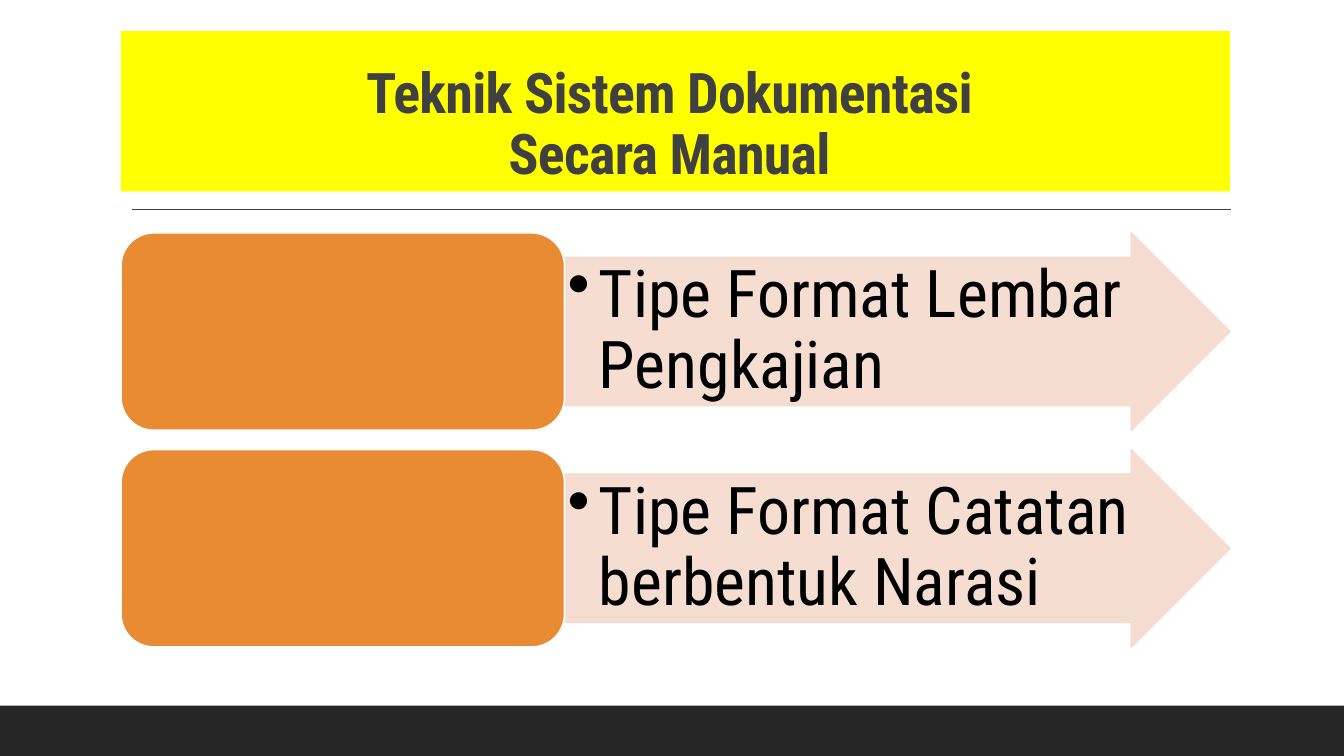
from dataclasses import dataclass

from lxml.etree import SubElement
from pptx import Presentation
from pptx.dml.color import RGBColor
from pptx.enum.shapes import MSO_CONNECTOR as Connector, MSO_SHAPE as Preset
from pptx.enum.text import MSO_ANCHOR as Anchor, PP_ALIGN as Align
from pptx.oxml.ns import qn
from pptx.shapes.autoshape import Shape
from pptx.slide import Slide
from pptx.util import Inches, Pt

COLORS = {
    "footer": "262626",
    "title_fill": "FFFF00",
    "title_text": "404040",
    "arrow": "F6DACE",
    "label": "E88B33",
    "label_line": "FFFFFF",
    "body_text": "000000",
}
FONT = "Roboto Condensed"

LEFT, ARROW_LEFT, RIGHT = 1.2, 5.6, 12.2
FIRST_TOP, ROW_STEP, ROW_HEIGHT = 2.31, 2.15, 1.96
SHAFT_SHARE = 0.75
SHAFT_HEIGHT = ROW_HEIGHT * SHAFT_SHARE
TEXT_WIDTH, TEXT_INSET, BULLET_INDENT = 5.87, 0.03, 0.31


@dataclass
class Box:
    left: float
    top: float
    width: float
    height: float

    def lengths(self) -> list[Inches]:
        return [Inches(n) for n in (self.left, self.top, self.width, self.height)]


@dataclass
class FormatRow:
    text: str
    top: float


ROWS = [
    FormatRow(text, FIRST_TOP + index * ROW_STEP)
    for index, text in enumerate(
        ["Tipe Format Lembar Pengkajian", "Tipe Format Catatan berbentuk Narasi"]
    )
]


def color(name: str) -> RGBColor:
    return RGBColor.from_string(COLORS[name])


def add_preset(slide: Slide, preset: Preset, box: Box, fill: str,
               line: str | None = None, opacity: int = 100) -> Shape:
    shape = slide.shapes.add_shape(preset, *box.lengths())
    shape.shadow.inherit = False
    shape.fill.solid()
    shape.fill.fore_color.rgb = color(fill)
    if line:
        shape.line.color.rgb = color(line)
        shape.line.width = Pt(1.25)
    else:
        shape.line.fill.background()
    if opacity < 100:
        for tint in shape._element.spPr.iter(qn("a:srgbClr")):
            SubElement(tint, qn("a:alpha"), val=str(opacity * 1000))
    return shape


def write_text(shape: Shape, text: str, *, size: float, text_color: str,
               bold: bool = False, align: Align = Align.LEFT,
               anchor: Anchor = Anchor.TOP, inset: float | None = None,
               bullet: str | None = None, tracking: float = 0) -> None:
    """Fill the shape with one paragraph; a newline becomes a line break."""
    frame = shape.text_frame
    frame.word_wrap = True
    frame.vertical_anchor = anchor
    if inset is not None:
        frame.margin_left = frame.margin_right = Inches(inset)
        frame.margin_top = frame.margin_bottom = Inches(inset)
    paragraph = frame.paragraphs[0]
    paragraph.text = text.replace("\n", "\v")
    paragraph.alignment = align
    paragraph.line_spacing = 0.9
    if bullet:
        properties = paragraph._p.get_or_add_pPr()
        properties.set("marL", str(Inches(BULLET_INDENT)))
        properties.set("indent", str(-Inches(BULLET_INDENT)))
        SubElement(properties, qn("a:buChar"), char=bullet)
    for run in paragraph.runs:
        run.font.name = FONT
        run.font.size = Pt(size)
        run.font.bold = bold
        run.font.color.rgb = color(text_color)
        if tracking:
            run._r.get_or_add_rPr().set("spc", str(round(tracking * 100)))


def add_rule(slide: Slide, left: float, right: float, top: float) -> None:
    """Draw the thin horizontal line under the title."""
    rule = slide.shapes.add_connector(
        Connector.STRAIGHT, Inches(left), Inches(top), Inches(right), Inches(top)
    )
    rule.line.color.rgb = color("title_text")
    rule.line.width = Pt(1)
    SubElement(rule._element.spPr, qn("a:effectLst"))


def add_title(slide: Slide) -> None:
    title = add_preset(slide, Preset.RECTANGLE,
                       Box(LEFT, 0.31, RIGHT - LEFT, 1.59), "title_fill")
    write_text(title, "Teknik Sistem Dokumentasi \nSecara Manual ", size=40,
               text_color="title_text", bold=True, align=Align.CENTER,
               anchor=Anchor.BOTTOM, tracking=-0.5)


def add_format_row(slide: Slide, row: FormatRow) -> None:
    arrow = add_preset(slide, Preset.RIGHT_ARROW,
                       Box(ARROW_LEFT, row.top, RIGHT - ARROW_LEFT, ROW_HEIGHT),
                       "arrow", line="arrow", opacity=90)
    arrow.adjustments[0] = SHAFT_SHARE
    arrow.adjustments[1] = 0.5
    text_top = row.top + (ROW_HEIGHT - SHAFT_HEIGHT) / 2
    text_box = slide.shapes.add_textbox(
        *Box(ARROW_LEFT, text_top, TEXT_WIDTH, SHAFT_HEIGHT).lengths()
    )
    write_text(text_box, row.text, size=47, text_color="body_text",
               inset=TEXT_INSET, bullet="•")
    add_preset(slide, Preset.ROUNDED_RECTANGLE,
               Box(LEFT, row.top, ARROW_LEFT - LEFT, ROW_HEIGHT),
               "label", line="label_line")


def main() -> None:
    presentation = Presentation()
    presentation.slide_width = Inches(13.33)
    presentation.slide_height = Inches(7.5)
    slide = presentation.slides.add_slide(presentation.slide_layouts[6])
    add_preset(slide, Preset.RECTANGLE, Box(0, 7, 13.33, 0.5), "footer")
    add_rule(slide, 1.31, 12.21, 2.08)
    add_title(slide)
    for row in ROWS:
        add_format_row(slide, row)
    presentation.save("out.pptx")


if __name__ == "__main__":
    main()
